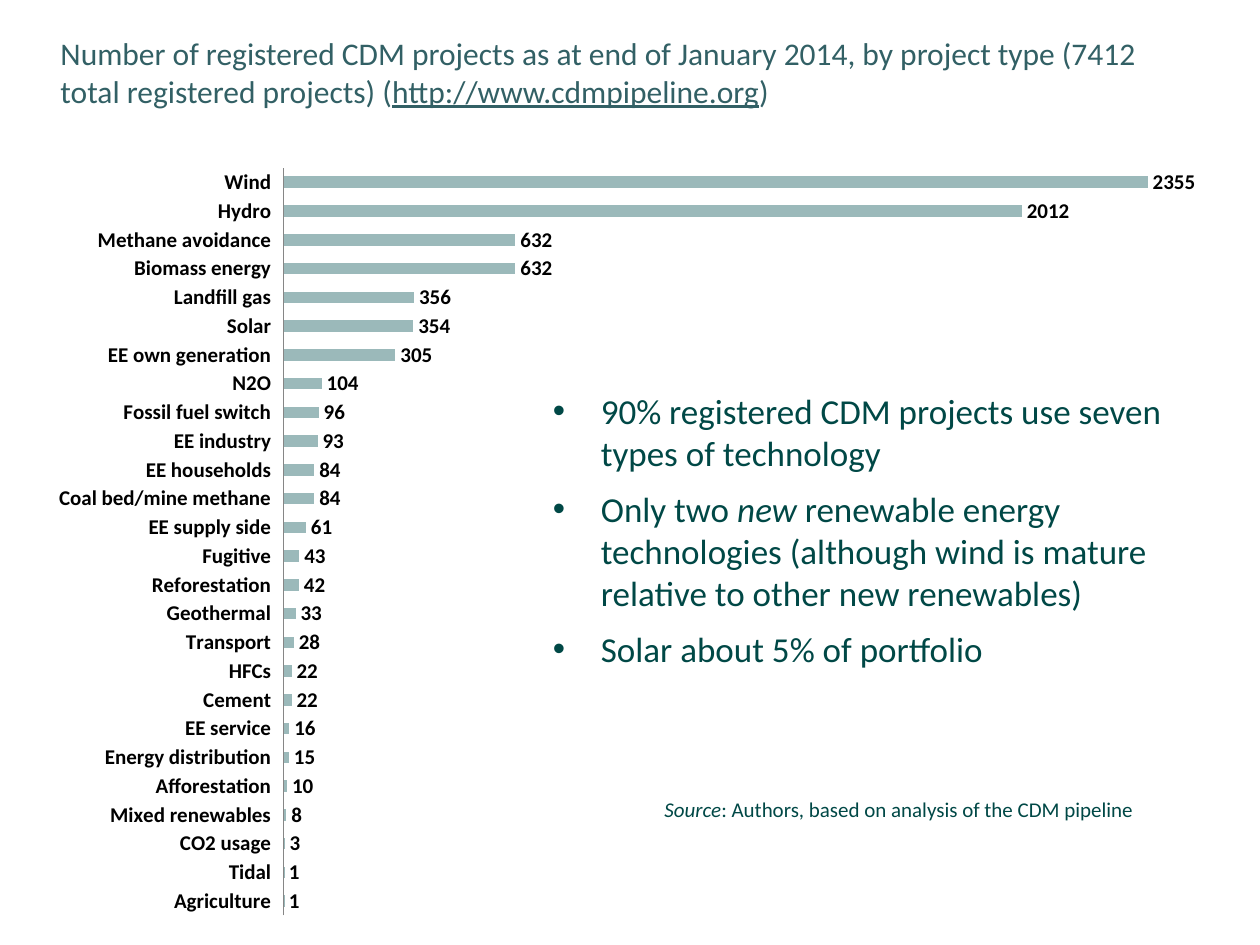
from dataclasses import dataclass

from lxml import etree
from pptx import Presentation
from pptx.chart.data import CategoryChartData
from pptx.dml.color import RGBColor
from pptx.enum.chart import XL_CHART_TYPE, XL_LABEL_POSITION, XL_TICK_LABEL_POSITION, XL_TICK_MARK
from pptx.enum.text import MSO_ANCHOR, MSO_AUTO_SIZE, PP_ALIGN
from pptx.oxml.ns import qn
from pptx.util import Inches, Pt

BAR = XL_CHART_TYPE.BAR_CLUSTERED
OUTSIDE_END = XL_LABEL_POSITION.OUTSIDE_END
LOW = XL_TICK_LABEL_POSITION.LOW
NO_TICK = XL_TICK_MARK.NONE
TOP = MSO_ANCHOR.TOP
NO_FIT = MSO_AUTO_SIZE.NONE
LEFT, CENTER = PP_ALIGN.LEFT, PP_ALIGN.CENTER


@dataclass(frozen=True)
class Theme:
    font: str = "Calibri"
    chart_font: str = "Arial"
    title: RGBColor = RGBColor(0x32, 0x60, 0x65)
    body: RGBColor = RGBColor(0x00, 0x48, 0x46)
    bar: RGBColor = RGBColor(0x9B, 0xB9, 0xBA)
    axis: RGBColor = RGBColor(0x86, 0x86, 0x86)
    label: RGBColor = RGBColor(0x00, 0x00, 0x00)
    title_size: Pt = Pt(18)
    body_size: Pt = Pt(20)
    source_size: Pt = Pt(12)
    label_size: Pt = Pt(12)
    chart_size: Pt = Pt(10)


@dataclass(frozen=True)
class Run:
    text: str
    italic: bool = False
    underline: bool = False


@dataclass(frozen=True)
class Box:
    left: float
    top: float
    width: float
    height: float

    def lengths(self) -> tuple:
        return tuple(Inches(v) for v in (self.left, self.top, self.width, self.height))


THEME = Theme()

TITLE = [
    Run("Number of registered CDM projects as at end of January 2014, "
        "by project type (7412 total registered projects) ("),
    Run("http://www.cdmpipeline.org", underline=True),
    Run(")"),
]
BULLETS = [
    [Run("90% registered CDM projects use seven types of technology")],
    [Run("Only two "), Run("new", italic=True),
     Run(" renewable energy technologies (although wind is mature "
         "relative to other new renewables)")],
    [Run("Solar about 5% of portfolio")],
]
SOURCE = [Run("Source", italic=True),
          Run(": Authors, based on analysis of the CDM pipeline")]

# Listed from the bottom bar to the top bar
PROJECTS = {
    "Agriculture": 1, "Tidal": 1, "CO2 usage": 3, "Mixed renewables": 8,
    "Afforestation": 10, "Energy distribution": 15, "EE service": 16,
    "Cement": 22, "HFCs": 22, "Transport": 28, "Geothermal": 33,
    "Reforestation": 42, "Fugitive": 43, "EE supply side": 61,
    "Coal bed/mine methane": 84, "EE households": 84, "EE industry": 93,
    "Fossil fuel switch": 96, "N2O": 104, "EE own generation": 305,
    "Solar": 354, "Landfill gas": 356, "Biomass energy": 632,
    "Methane avoidance": 632, "Hydro": 2012, "Wind": 2355,
}


def set_font(font, color: RGBColor, **values) -> None:
    for name, value in values.items():
        setattr(font, name, value)
    font.color.rgb = color


def add_runs(p, runs: list[Run], size: Pt, color: RGBColor) -> None:
    for run in runs:
        r = p.add_run()
        r.text = run.text
        set_font(r.font, color, name=THEME.font, size=size, bold=False,
                 italic=run.italic, underline=run.underline)


def add_bullet(p) -> None:
    pPr = p._p.get_or_add_pPr()
    pPr.set("marL", str(Inches(0.38)))
    pPr.set("indent", str(-Inches(0.38)))
    etree.SubElement(pPr, qn("a:buFont")).set("typeface", THEME.chart_font)
    etree.SubElement(pPr, qn("a:buChar")).set("char", "•")


def add_title(s, box: Box) -> None:
    sp = s.shapes.title
    sp.left, sp.top, sp.width, sp.height = box.lengths()
    tf = sp.text_frame
    tf.word_wrap, tf.auto_size, tf.vertical_anchor = True, NO_FIT, TOP
    p = tf.paragraphs[0]
    p.alignment = LEFT
    add_runs(p, TITLE, THEME.title_size, THEME.title)


def add_chart(s, box: Box) -> None:
    data = CategoryChartData()
    data.categories = list(PROJECTS)
    data.add_series("Series 1", list(PROJECTS.values()))
    chart = s.shapes.add_chart(BAR, *box.lengths(), data).chart
    chart.has_legend = chart.has_title = False
    set_font(chart.font, THEME.label, name=THEME.chart_font, size=THEME.chart_size)
    label_format = {"name": THEME.font, "size": THEME.label_size, "bold": True}

    # Axes
    cat, val = chart.category_axis, chart.value_axis
    cat.major_tick_mark = cat.minor_tick_mark = NO_TICK
    cat.tick_label_position = LOW
    cat.format.line.color.rgb = THEME.axis
    set_font(cat.tick_labels.font, THEME.label, **label_format)
    val.visible = val.has_major_gridlines = False
    val.minimum_scale, val.maximum_scale = 0, 2500

    # Bars and their values
    plot = chart.plots[0]
    plot.gap_width, plot.overlap, plot.vary_by_categories = 150, -25, False
    fill = plot.series[0].format.fill
    fill.solid()
    fill.fore_color.rgb = THEME.bar
    plot.has_data_labels = True
    labels = plot.data_labels
    labels.show_value, labels.position = True, OUTSIDE_END
    set_font(labels.font, THEME.label, **label_format)


def add_source(s, box: Box) -> None:
    tf = s.shapes.add_textbox(*box.lengths()).text_frame
    tf.word_wrap = False
    p = tf.paragraphs[0]
    p.alignment = CENTER
    add_runs(p, SOURCE, THEME.source_size, THEME.body)


def add_bullets(s, box: Box) -> None:
    tf = s.shapes.add_textbox(*box.lengths()).text_frame
    tf.word_wrap = True
    for i, runs in enumerate(BULLETS):
        p = tf.add_paragraph() if i else tf.paragraphs[0]
        p.space_before, p.space_after = Pt(4 if i else 0), Pt(4)
        add_bullet(p)
        add_runs(p, runs, THEME.body_size, THEME.body)


def main() -> None:
    prs = Presentation()
    prs.slide_width, prs.slide_height = Inches(10), Inches(7.5)
    s = prs.slides.add_slide(prs.slide_layouts[5])
    add_title(s, Box(0.38, 0.22, 9.23, 0.71))
    add_chart(s, Box(0.28, 1.21, 9.44, 6.18))
    add_source(s, Box(5.15, 6.27, 3.97, 0.3))
    add_bullets(s, Box(4.29, 3.04, 5.21, 3.66))
    prs.save("out.pptx")


if __name__ == "__main__":
    main()
